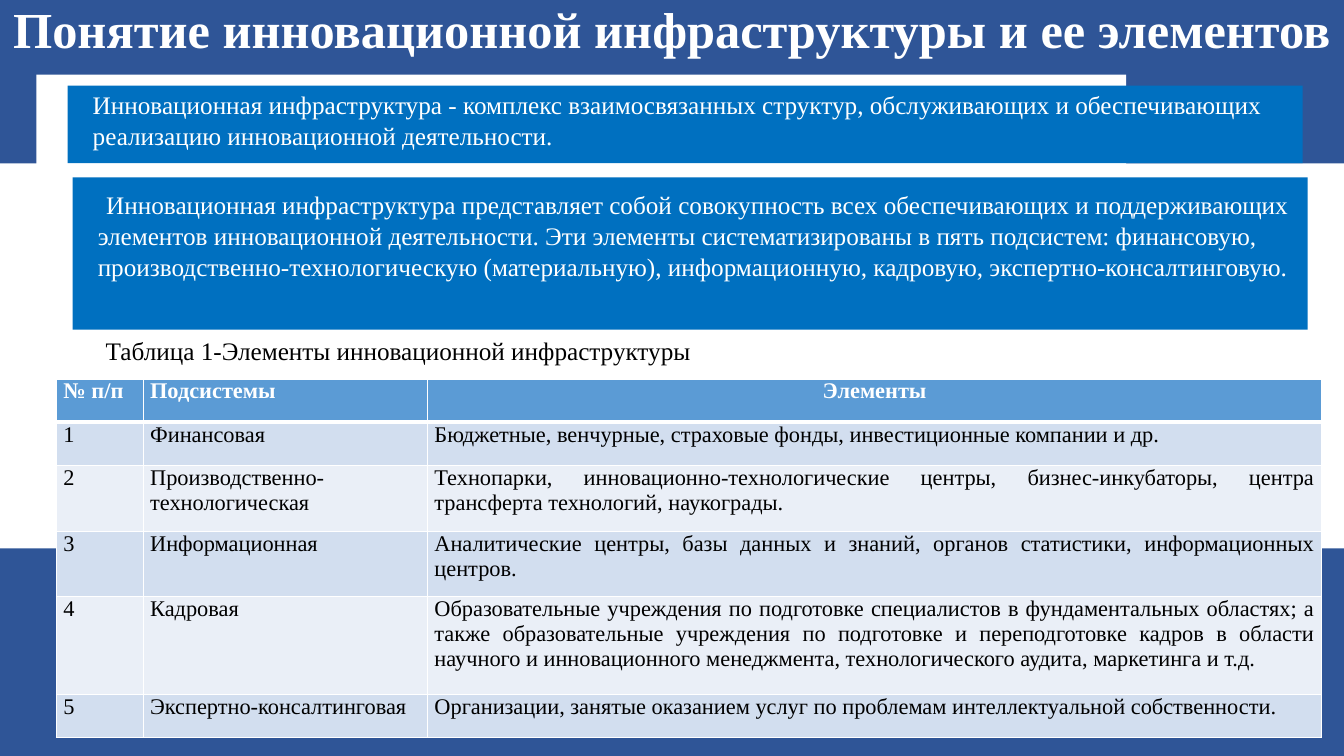
from dataclasses import dataclass

from lxml import etree
from pptx import Presentation
from pptx.dml.color import RGBColor
from pptx.enum.shapes import MSO_SHAPE
from pptx.enum.text import PP_ALIGN
from pptx.oxml.ns import qn
from pptx.util import Inches, Pt

RECTANGLE = MSO_SHAPE.RECTANGLE
LEFT, CENTER, JUSTIFY = PP_ALIGN.LEFT, PP_ALIGN.CENTER, PP_ALIGN.JUSTIFY
FONT = "Times New Roman"
WHITE, BLACK = "FFFFFF", "000000"
NAVY, BLUE = "2F5597", "0070C0"
HEADER_FILL, BAND_FILLS = "5B9BD5", ("D2DEEF", "EAEFF7")
SLIDE_W, SLIDE_H = 13.33, 7.5


@dataclass
class Box:
    left: float
    top: float
    width: float
    height: float

    def lengths(self) -> tuple:
        return tuple(Inches(v) for v in (self.left, self.top, self.width, self.height))


@dataclass
class Definition:
    panel: Box
    card: Box
    body: Box
    text: str
    lead_size: float = 18


def color(hex_code: str) -> RGBColor:
    return RGBColor.from_string(hex_code)


def block(slide, box: Box, fill: str) -> None:
    shape = slide.shapes.add_shape(RECTANGLE, *box.lengths())
    shape.shadow.inherit = False
    shape.fill.solid()
    shape.fill.fore_color.rgb = color(fill)
    shape.line.fill.background()


def write(frame, text: str, *, size: float = 18, hue: str = WHITE, bold: bool = False,
          align=LEFT, spacing: float = 1.0, lead_size: float = 0) -> None:
    """Write one paragraph; lead_size sets its opening space in another size."""
    paragraph = frame.paragraphs[0]
    paragraph.alignment = align
    paragraph.line_spacing = spacing
    pieces = [(text, size)]
    if lead_size and text.startswith(" "):
        pieces = [(" ", lead_size), (text[1:], size)]
    for words, points in pieces:
        run = paragraph.add_run()
        run.text = words
        run.font.name = FONT
        run.font.size = Pt(points)
        run.font.bold = bold
        run.font.color.rgb = color(hue)


def label(slide, box: Box, text: str, inset_x: float = 0, inset_y: float = 0, **style) -> None:
    frame = slide.shapes.add_textbox(*box.lengths()).text_frame
    frame.word_wrap = True
    frame.margin_left = frame.margin_right = Inches(inset_x)
    frame.margin_top = frame.margin_bottom = Inches(inset_y)
    write(frame, text, **style)


def draw_definition(slide, item: Definition) -> None:
    block(slide, item.panel, WHITE)
    block(slide, item.card, BLUE)
    label(slide, item.body, item.text, lead_size=item.lead_size)


def set_borders(cell, widths: dict[str, float]) -> None:
    properties = cell._tc.get_or_add_tcPr()
    for position, (side, points) in enumerate(widths.items()):
        line = etree.Element(qn(f"a:{side}"), w=str(Pt(points)))
        fill = etree.SubElement(line, qn("a:solidFill"))
        etree.SubElement(fill, qn("a:srgbClr"), val=WHITE)
        properties.insert(position, line)


def draw_table(slide, box: Box, columns: list[float], heights: list[float],
               rows: list[tuple[str, ...]]) -> None:
    table = slide.shapes.add_table(len(rows), len(columns), *box.lengths()).table
    for column, width in zip(table.columns, columns):
        column.width = Inches(width)
    for r, (height, values) in enumerate(zip(heights, rows)):
        table.rows[r].height = Inches(height)
        header = r == 0
        for c, value in enumerate(values):
            cell = table.cell(r, c)
            cell.margin_left = cell.margin_right = Inches(0.07)
            cell.margin_top = cell.margin_bottom = 0
            cell.fill.solid()
            cell.fill.fore_color.rgb = color(HEADER_FILL if header else BAND_FILLS[(r - 1) % 2])
            set_borders(cell, {"lnL": 1, "lnR": 1, "lnT": 3 if r == 1 else 1,
                               "lnB": 3 if header else 1})
            write(cell.text_frame, value, size=16, hue=WHITE if header else BLACK,
                  bold=header, align=CENTER if header and c == 2 else JUSTIFY)


SUBSYSTEMS = Definition(
    Box(0.41, 1.66, 10.81, 0.85), Box(0.72, 1.76, 12.25, 1.51), Box(0.97, 1.79, 11.86, 0.95),
    " Инновационная инфраструктура представляет собой совокупность всех обеспечивающих и "
    "поддерживающих элементов инновационной деятельности. Эти элементы систематизированы в "
    "пять подсистем: финансовую, производственно-технологическую (материальную), "
    "информационную, кадровую, экспертно-консалтинговую.",
    lead_size=24)
COMPLEX = Definition(
    Box(0.36, 0.74, 10.81, 0.95), Box(0.67, 0.85, 12.25, 0.77), Box(0.92, 0.89, 11.86, 0.61),
    "Инновационная инфраструктура - комплекс взаимосвязанных структур, обслуживающих и "
    "обеспечивающих реализацию инновационной деятельности.")

ELEMENTS = [
    ("№ п/п", "Подсистемы", "Элементы"),
    ("1", "Финансовая",
     "Бюджетные, венчурные, страховые фонды, инвестиционные компании и др."),
    ("2", "Производственно-технологическая",
     "Технопарки, инновационно-технологические центры, бизнес-инкубаторы, центра "
     "трансферта технологий, наукограды."),
    ("3", "Информационная",
     "Аналитические центры, базы данных и знаний, органов статистики, "
     "информационных центров."),
    ("4", "Кадровая",
     "Образовательные учреждения по подготовке специалистов в фундаментальных областях; "
     "а также образовательные учреждения по подготовке и переподготовке кадров в области "
     "научного и инновационного менеджмента, технологического аудита, маркетинга и т.д."),
    ("5", "Экспертно-консалтинговая",
     "Организации, занятые оказанием услуг по проблемам интеллектуальной собственности."),
]


def main() -> None:
    deck = Presentation()
    deck.slide_width, deck.slide_height = Inches(SLIDE_W), Inches(SLIDE_H)
    slide = deck.slides.add_slide(deck.slide_layouts[6])

    # Background bands
    block(slide, Box(0, 0, SLIDE_W, 1.62), NAVY)
    block(slide, Box(0, 5.44, SLIDE_W, 2.06), NAVY)

    # Title and definitions
    label(slide, Box(0, 0, SLIDE_W, 0.54), "Понятие инновационной инфраструктуры и ее элементов",
          inset_y=0.05, size=36, bold=True, align=CENTER, spacing=0.9)
    for definition in (SUBSYSTEMS, COMPLEX):
        draw_definition(slide, definition)

    # Table with its caption
    label(slide, Box(0.95, 3.28, 10.06, 0.74), "Таблица 1-Элементы инновационной инфраструктуры",
          inset_x=0.1, inset_y=0.05, hue=BLACK)
    draw_table(slide, Box(0.56, 3.76, 12.55, 3.56), [0.86, 2.82, 8.87],
               [0.43, 0.43, 0.65, 0.65, 0.97, 0.43], ELEMENTS)

    deck.save("out.pptx")


if __name__ == "__main__":
    main()
